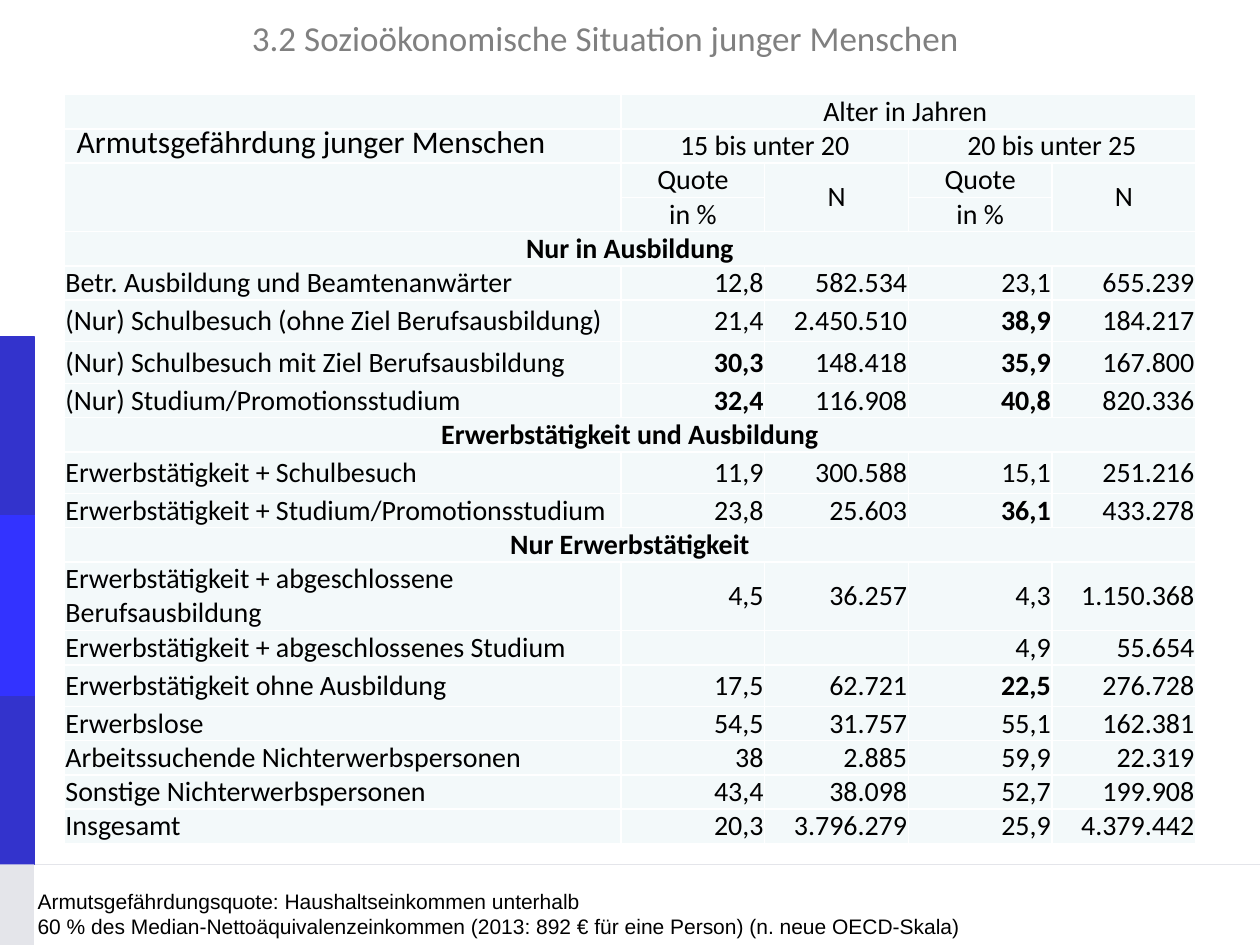
from lxml import etree
from pptx import Presentation
from pptx import util as u
from pptx.dml.color import RGBColor
from pptx.enum import shapes, text
from pptx.oxml.ns import qn

COLOURS = {
    "bar": "3333CC", "bright": "3333FF", "grey": "E4E5EA",
    "cell": "F3F9FA", "border": "FFFFFF", "ink": "000000", "title": "808080",
}
LEFT, CENTER, RIGHT = text.PP_ALIGN.LEFT, text.PP_ALIGN.CENTER, text.PP_ALIGN.RIGHT
MIDDLE = text.MSO_ANCHOR.MIDDLE

# Table content: a one-item row is a section heading over all columns
HEADER = [
    ["", "Alter in Jahren ", "", "", ""],
    ["", "15 bis unter 20", "", "20 bis unter 25", ""],
    ["", "Quote", "N", "Quote", "N"],
    ["", "in %", "", "in %", ""],
]
BODY = [
    ["Nur in Ausbildung"],
    ["Betr. Ausbildung und Beamtenanwärter", "12,8", "582.534", "23,1", "655.239"],
    ["(Nur) Schulbesuch (ohne Ziel Berufsausbildung)", "21,4", "2.450.510", "38,9", "184.217"],
    ["(Nur) Schulbesuch mit Ziel Berufsausbildung", "30,3", "148.418", "35,9", "167.800"],
    ["(Nur) Studium/Promotionsstudium", "32,4", "116.908", "40,8", "820.336"],
    ["Erwerbstätigkeit und Ausbildung"],
    ["Erwerbstätigkeit + Schulbesuch", "11,9", "300.588", "15,1", "251.216"],
    ["Erwerbstätigkeit + Studium/Promotionsstudium", "23,8", "25.603", "36,1", "433.278"],
    ["Nur Erwerbstätigkeit"],
    ["Erwerbstätigkeit + abgeschlossene Berufsausbildung", "4,5", "36.257", "4,3", "1.150.368"],
    ["Erwerbstätigkeit + abgeschlossenes Studium", "", "", "4,9", "55.654"],
    ["Erwerbstätigkeit ohne Ausbildung", "17,5", "62.721", "22,5", "276.728"],
    ["Erwerbslose", "54,5", "31.757", "55,1", "162.381"],
    ["Arbeitssuchende Nichterwerbspersonen", "38", "2.885", "59,9", "22.319"],
    ["Sonstige Nichterwerbspersonen", "43,4", "38.098", "52,7", "199.908"],
    ["Insgesamt", "20,3", "3.796.279", "25,9", "4.379.442"],
]
HIGHLIGHTED = {"38,9", "30,3", "35,9", "32,4", "40,8", "36,1", "22,5"}
HEADER_MERGES = [((0, 1), (0, 4)), ((1, 1), (1, 2)), ((1, 3), (1, 4)),
                 ((2, 0), (3, 0)), ((2, 2), (3, 2)), ((2, 4), (3, 4))]
TALL_ROWS = {6, 7, 10, 13, 15}
COLUMN_WIDTHS = [4.42] + [1.14] * 4


def colour(name):
    return RGBColor.from_string(COLOURS[name])


def assign(target, values):
    for name, value in values.items():
        setattr(target, name, value)


class SlideBuilder:
    """Holds the text style and the page being filled."""

    def __init__(self, page, font="Calibri", size=16):
        self.page, self.font, self.size = page, font, size

    def add_words(self, para, words, align=LEFT, ink="ink", **style):
        para.alignment = align
        span = para.add_run()
        span.text = words
        assign(span.font, {"name": self.font, "size": u.Pt(self.size), **style})
        span.font.color.rgb = colour(ink)

    def bar(self, top, height, fill, outlined=True):
        box = self.page.shapes.add_shape(
            shapes.MSO_SHAPE.RECTANGLE, 0, u.Inches(top), u.Inches(0.27), u.Inches(height))
        box.shadow.inherit = False
        box.fill.solid()
        box.fill.fore_color.rgb = colour(fill)
        if outlined:
            box.line.color.rgb = colour(fill)
            box.line.width = u.Pt(0.75)
        else:
            box.line.fill.background()

    def rule(self, top):
        line = self.page.shapes.add_connector(
            shapes.MSO_CONNECTOR.STRAIGHT, 0, u.Inches(top), u.Inches(10), u.Inches(top))
        line.line.color.rgb = colour("grey")
        line.line.width = u.Pt(0.5)
        etree.SubElement(line._element.spPr, qn("a:effectLst"))

    def label(self, place, lines, frame=None, **style):
        box = self.page.shapes.add_textbox(*map(u.Inches, place)).text_frame
        assign(box, {"word_wrap": True, **(frame or {})})
        for index, words in enumerate(lines):
            para = box.add_paragraph() if index else box.paragraphs[0]
            self.add_words(para, words, **style)

    def cell(self, cell, words, align, bold):
        assign(cell, {"vertical_anchor": MIDDLE, "margin_left": u.Inches(0.01),
                      "margin_right": u.Inches(0.01), "margin_top": 0, "margin_bottom": 0})
        properties = cell._tc.get_or_add_tcPr()
        for side in ("lnL", "lnR", "lnT", "lnB"):
            border = etree.SubElement(properties, qn(f"a:{side}"), w=str(int(u.Pt(1))))
            fill = etree.SubElement(border, qn("a:solidFill"))
            etree.SubElement(fill, qn("a:srgbClr"), val=COLOURS["border"])
        cell.fill.solid()
        cell.fill.fore_color.rgb = colour("cell")
        para = cell.text_frame.paragraphs[0]
        if words:
            self.add_words(para, words, align, bold=bold)
        else:
            # Empty cells keep the table's text size, so rows stay low
            end = etree.SubElement(para._p, qn("a:endParaRPr"), sz=str(self.size * 100))
            etree.SubElement(end, qn("a:latin"), typeface=self.font)

    def table(self, place):
        rows = HEADER + BODY
        frame = self.page.shapes.add_table(
            len(rows), len(COLUMN_WIDTHS), *map(u.Inches, place))
        grid = frame.table
        assign(grid, {"first_row": False, "horz_banding": False})
        for column, width in zip(grid.columns, COLUMN_WIDTHS):
            column.width = u.Inches(width)
        for r, row in enumerate(rows):
            grid.rows[r].height = u.Inches(0.33 if r in TALL_ROWS else 0.21)
            section = len(row) == 1
            for c in range(len(COLUMN_WIDTHS)):
                words = row[c] if c < len(row) else ""
                if section or r < len(HEADER):
                    align = CENTER
                else:
                    align = RIGHT if c else LEFT
                self.cell(grid.cell(r, c), words, align, section or words in HIGHLIGHTED)
            if section:
                grid.cell(r, 0).merge(grid.cell(r, len(COLUMN_WIDTHS) - 1))
        for first, last in HEADER_MERGES:
            grid.cell(*first).merge(grid.cell(*last))
        frame.height = u.Inches(place[3])


def main():
    deck = Presentation()
    deck.slide_width, deck.slide_height = u.Inches(10), u.Inches(7.5)
    builder = SlideBuilder(deck.slides.add_slide(deck.slide_layouts[6]))

    # Side bars and footer rule
    builder.bar(2.67, 1.42, "bar")
    builder.rule(6.86)
    builder.bar(5.51, 1.35, "bar")
    builder.bar(6.86, 0.64, "grey", outlined=False)
    builder.bar(4.09, 1.43, "bright")

    # Table with its caption
    builder.table((0.51, 0.75, 8.98, 5.96))
    builder.label((0.51, 0.92, 3.97, 0.4), ["Armutsgefährdung junger Menschen"],
                  {"word_wrap": False}, size=u.Pt(18))

    # Title and footnote
    builder.label((0.12, 0.02, 9.37, 0.55), ["3.2 Sozioökonomische Situation junger Menschen"],
                  {"vertical_anchor": MIDDLE}, align=CENTER, ink="title", size=u.Pt(20))
    builder.label((0.2, 7, 9.21, 0.5), [
        "Armutsgefährdungsquote: Haushaltseinkommen unterhalb",
        "60 % des Median-Nettoäquivalenzeinkommen (2013: 892 € für eine Person) (n. neue OECD-Skala)",
    ], name="Arial", size=u.Pt(12))

    deck.save("out.pptx")


if __name__ == "__main__":
    main()
